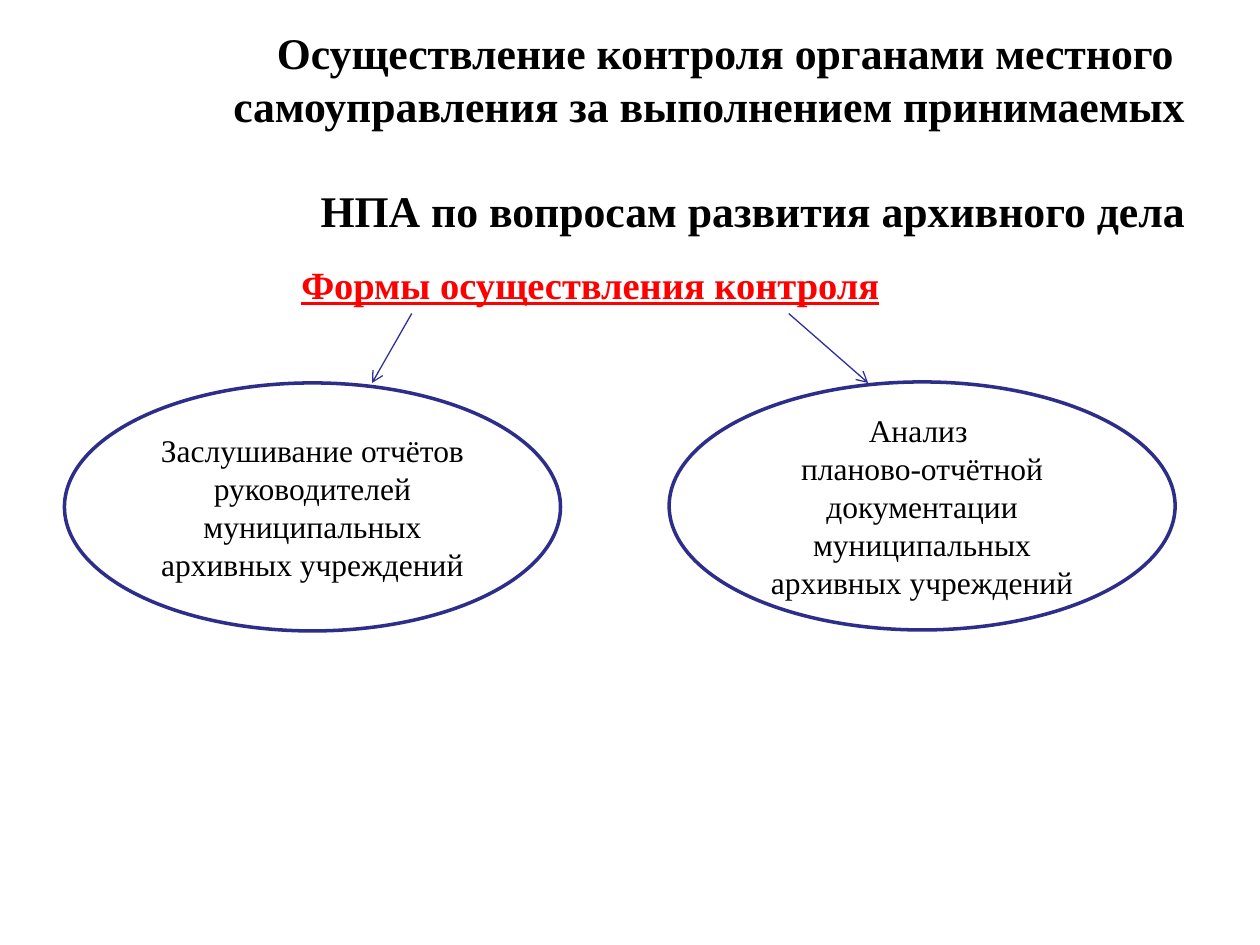
from lxml.etree import SubElement
from pptx import Presentation
from pptx.dml.color import RGBColor
from pptx.enum.shapes import MSO_CONNECTOR, MSO_SHAPE
from pptx.enum.text import MSO_ANCHOR, MSO_AUTO_SIZE, PP_ALIGN
from pptx.oxml.ns import qn
from pptx.util import Cm, Pt

THEME = {
    "black": RGBColor(0x00, 0x00, 0x00),
    "red": RGBColor(0xFF, 0x00, 0x00),
    "white": RGBColor(0xFF, 0xFF, 0xFF),
    "outline": RGBColor(0x2D, 0x2D, 0x8A),
    "arrow": RGBColor(0x2F, 0x2F, 0x98),
    "font": "Times New Roman",
    "title": {"size": Pt(25), "bold": True},
    "heading": {"size": Pt(22), "bold": True, "underline": True},
    "body": {"size": Pt(18)},
}


def write(sp, lines, style, color, align, anchor):
    """Fill a shape with one paragraph per line."""
    tf = sp.text_frame
    tf.word_wrap = True
    tf.vertical_anchor = anchor
    for i, line in enumerate(lines):
        p = tf.paragraphs[0] if i == 0 else tf.add_paragraph()
        p.alignment = align
        r = p.add_run()
        r.text = line
        r.font.name = THEME["font"]
        r.font.color.rgb = THEME[color]
        for name, value in THEME[style].items():
            setattr(r.font, name, value)
    return tf


prs = Presentation()
prs.slide_width, prs.slide_height = Cm(25.4), Cm(19.05)
s = prs.slides.add_slide(prs.slide_layouts[6])

# Title, with its last line set apart
sp = s.shapes.add_textbox(Cm(4.29), Cm(0.76), Cm(19.84), Cm(3.76))
tf = write(sp, ["Осуществление контроля органами местного ",
                "самоуправления за выполнением принимаемых",
                "НПА по вопросам развития архивного дела"],
           "title", "black", PP_ALIGN.RIGHT, MSO_ANCHOR.MIDDLE)
tf.paragraphs[-1].space_before = Pt(30)

# Heading
sp = s.shapes.add_textbox(Cm(1.9), Cm(5.13), Cm(20), Cm(1.19))
tf = write(sp, ["Формы осуществления контроля"],
           "heading", "red", PP_ALIGN.CENTER, MSO_ANCHOR.TOP)
tf.auto_size = MSO_AUTO_SIZE.SHAPE_TO_FIT_TEXT

# Forms of control
forms = [
    (1.3, 7.72, 10, ["Заслушивание отчётов руководителей муниципальных архивных учреждений"]),
    (13.49, 7.7, 10.2, ["Анализ ", "планово-отчётной документации муниципальных архивных учреждений"]),
]
for left, top, width, lines in forms:
    sp = s.shapes.add_shape(MSO_SHAPE.OVAL, Cm(left), Cm(top), Cm(width), Cm(5))
    sp.shadow.inherit = False
    sp.fill.solid()
    sp.fill.fore_color.rgb = THEME["white"]
    sp.line.color.rgb = THEME["outline"]
    sp.line.width = Pt(2)
    write(sp, lines, "body", "black", PP_ALIGN.CENTER, MSO_ANCHOR.MIDDLE)

# Arrows from the heading to the forms
for start, end in [(8.3, 7.5), (15.9, 17.5)]:
    sp = s.shapes.add_connector(MSO_CONNECTOR.STRAIGHT, Cm(start), Cm(6.32), Cm(end), Cm(7.72))
    sp.line.color.rgb = THEME["arrow"]
    sp.line.width = Pt(0.75)
    SubElement(sp.line._get_or_add_ln(), qn("a:tailEnd"), type="arrow")
    SubElement(sp._element.spPr, qn("a:effectLst"))

prs.save("out.pptx")
